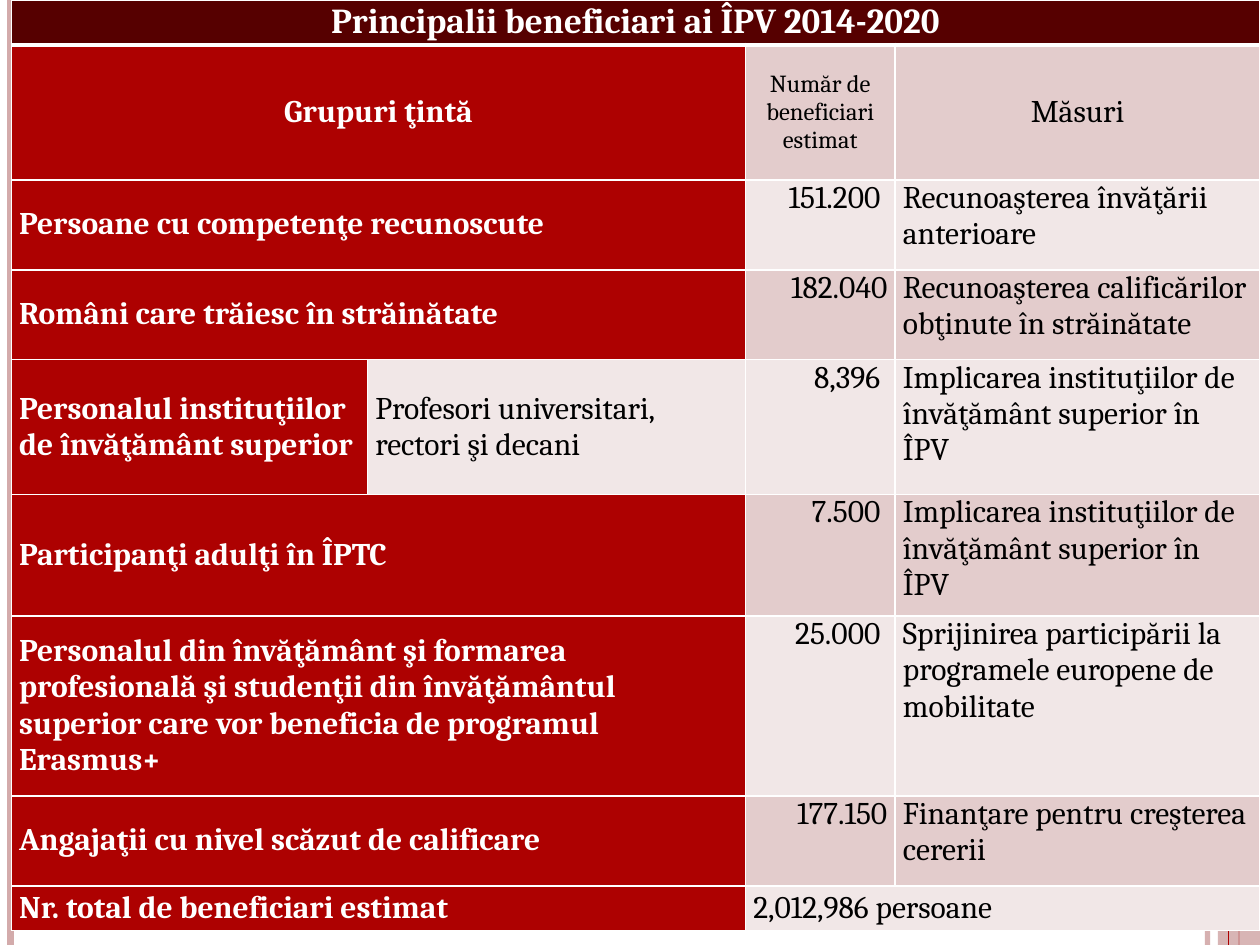
import pptx
import pptx.util
import pptx.dml.color
import pptx.enum.shapes
import pptx.enum.text
import pptx.oxml
import pptx.oxml.ns
import lxml.etree

Pt = pptx.util.Pt
qn = pptx.oxml.ns.qn
ALIGN = pptx.enum.text.PP_ALIGN
ANCHOR = pptx.enum.text.MSO_ANCHOR
FONT = "Cambria"
HEX = {"wine": "560000", "red": "AD0101", "pink": "E3CCCC", "pale": "F1E7E7",
       "rose": "D3ABAB", "white": "FFFFFF", "black": "000000"}
WIDE, HIGH = 720, 540
COLS = [203.5, 216, 85.5, 208.5]
UNIT = 25.7
ROWS = [1, 3, 2, 2, 3, 2.7, 4, 2, 1]
GROUPS = [
    ("Persoane cu competenţe recunoscute", "151.200 ",
     "Recunoaşterea învăţării anterioare"),
    ("Români care trăiesc în străinătate", "182.040",
     "Recunoaşterea calificărilor obţinute în străinătate"),
    ("Personalul instituţiilor de învăţământ superior", "8,396 ",
     "Implicarea instituţiilor de învăţământ superior în ÎPV"),
    ("Participanţi adulţi în ÎPTC", "7.500 ",
     "Implicarea instituţiilor de învăţământ superior în ÎPV"),
    ("Personalul din învăţământ şi formarea profesională şi studenţii din "
     "învăţământul superior care vor beneficia de programul Erasmus+", "25.000 ",
     "Sprijinirea participării la programele europene de mobilitate"),
    ("Angajaţii cu nivel scăzut de calificare", "177.150",
     "Finanţare pentru creşterea cererii"),
]
STAFF = 4


def color(name):
    """Return the named colour."""
    return pptx.dml.color.RGBColor.from_string(HEX[name])


def fade(shape, part):
    """Set the opacity of a shape's colour in percent."""
    tone = next(shape.element.spPr.iter(qn("a:srgbClr")))
    lxml.etree.SubElement(tone, qn("a:alpha"), val=str(part * 1000))


def rule(slide, x, top, high, tint, width):
    """Draw one vertical rule and return it."""
    kind = pptx.enum.shapes.MSO_CONNECTOR.STRAIGHT
    line = slide.shapes.add_connector(kind, Pt(x), Pt(top), Pt(x), Pt(top + high))
    line.line.color.rgb = color(tint)
    line.line.width = Pt(width)
    lxml.etree.SubElement(line.element.spPr, qn("a:effectLst"))
    return line


def frame(slide, left, top, wide, high):
    """Draw the rules and the band at the slide's edges."""
    right = left + wide
    fade(rule(slide, right - 30, top, high, "rose", 3), 93)
    rule(slide, left + 6, top, high, "rose", 4.5)
    rule(slide, right - 12, top, high, "red", 1.5)
    kind = pptx.enum.shapes.MSO_SHAPE.RECTANGLE
    band = slide.shapes.add_shape(kind, Pt(right - 24), Pt(top), Pt(24), Pt(high))
    band.shadow.inherit = False
    band.fill.solid()
    band.fill.fore_color.rgb = color("rose")
    band.line.fill.background()
    fade(band, 87)
    rule(slide, right - 18, top, high, "red", 0.75)


def edge(cell, side, width):
    """Give one side of a cell a white border."""
    props = cell._tc.get_or_add_tcPr()
    line = lxml.etree.SubElement(props, qn("a:ln" + side), w=str(Pt(width)))
    fill = lxml.etree.SubElement(line, qn("a:solidFill"))
    lxml.etree.SubElement(fill, qn("a:srgbClr"), val=HEX["white"])


def style(grid):
    """Set the borders, margins and base fill of every cell."""
    for r, row in enumerate(grid.rows):
        for cell in row.cells:
            for side in "LRTB":
                heavy = (r, side) in [(0, "B"), (1, "T")]
                edge(cell, side, 3 if heavy else 1)
            cell.margin_left = cell.margin_right = Pt(4.5)
            cell.margin_top = cell.margin_bottom = 0
            cell.fill.solid()
            cell.fill.fore_color.rgb = color("pale" if r % 2 == 0 else "pink")


def write(cell, text, size=18, fill=None, align=ALIGN.LEFT, anchor=ANCHOR.MIDDLE):
    """Write a cell; a dark fill makes its text bold and white."""
    if fill:
        cell.fill.fore_color.rgb = color(fill)
    cell.vertical_anchor = anchor
    para = cell.text_frame.paragraphs[0]
    para.alignment = align
    run = para.add_run()
    run.text = text
    run.font.name = FONT
    run.font.size = Pt(size)
    run.font.bold = bool(fill)
    run.font.color.rgb = color("white" if fill else "black")


def table(slide, left, top, wide, high):
    """Build the table of target groups, numbers and measures."""
    grid = slide.shapes.add_table(len(ROWS), len(COLS), Pt(left), Pt(top),
                                  Pt(wide), Pt(high)).table
    for col, size in zip(grid.columns, COLS):
        col.width = Pt(size)
    for row, size in zip(grid.rows, ROWS):
        row.height = Pt(size * UNIT)
    style(grid)
    last = len(ROWS) - 1
    grid.cell(0, 0).merge(grid.cell(0, 3))
    for r in range(1, last + 1):
        if r != STAFF:
            grid.cell(r, 0).merge(grid.cell(r, 1))
    grid.cell(last, 2).merge(grid.cell(last, 3))

    mid = ALIGN.CENTER
    write(grid.cell(0, 0), "Principalii beneficiari ai ÎPV 2014-2020", 20, "wine", mid)
    write(grid.cell(1, 0), "Grupuri ţintă", fill="red", align=mid)
    write(grid.cell(1, 2), "Număr de beneficiari estimat", 14, align=mid)
    write(grid.cell(1, 3), "Măsuri", align=mid)
    for r, (group, count, step) in enumerate(GROUPS, 2):
        write(grid.cell(r, 0), group, fill="red")
        write(grid.cell(r, 2), count, align=ALIGN.RIGHT, anchor=ANCHOR.TOP)
        write(grid.cell(r, 3), step, anchor=ANCHOR.TOP)
    write(grid.cell(STAFF, 1), "Profesori universitari, rectori şi decani")
    write(grid.cell(last, 0), "Nr. total de beneficiari estimat", fill="red")
    write(grid.cell(last, 2), "2,012,986 persoane")


def main():
    """Build and save the slide."""
    deck = pptx.Presentation()
    deck.slide_width, deck.slide_height = Pt(WIDE), Pt(HIGH)
    slide = deck.slides.add_slide(deck.slide_layouts[6])
    frame(slide, 0, 0, WIDE, HIGH)
    table(slide, 6.5, 0, sum(COLS), sum(ROWS) * UNIT)
    deck.save("out.pptx")


if __name__ == "__main__":
    main()
